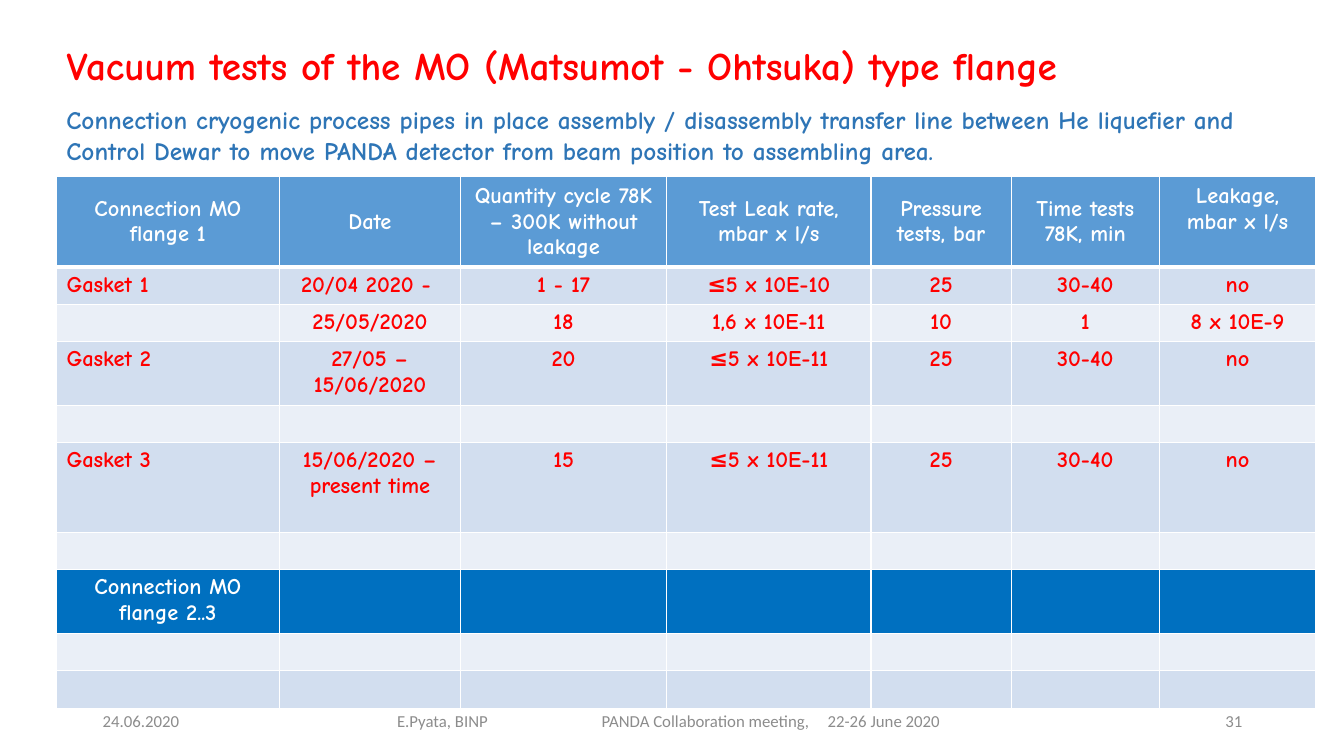
"""Build the slide on vacuum tests of the MO type flange."""
from lxml import etree
from pptx import Presentation
from pptx.dml.color import RGBColor
from pptx.enum import text as t
from pptx.oxml import ns
from pptx.util import Inches, Pt

TITLE = "Vacuum tests of the MO (Matsumot - Ohtsuka) type flange"
SUBTITLE = ("Connection cryogenic process pipes in place assembly / disassembly "
            "transfer line between He liquefier and Control Dewar to move PANDA "
            "detector from beam position to assembling area.")
HEADERS = ["Connection MO flange 1", "Date", "Quantity cycle 78K – 300K without leakage",
           "Test Leak rate, mbar x l/s", "Pressure tests, bar", "Time tests 78K, min",
           "Leakage, mbar x l/s"]
EMPTY = [""] * len(HEADERS)
ROWS = [
    HEADERS,
    ["Gasket 1", "20/04 2020 - ", "1 - 17", "≤5 x 10E-10", "25", "30-40", "no"],
    ["", "25/05/2020", "18", "1,6 x 10E-11", "10", "1", "8 x 10E-9"],
    ["Gasket 2", "27/05 – 15/06/2020", "20", "≤5 x 10E-11", "25", "30-40", "no"],
    EMPTY,
    ["Gasket 3", "15/06/2020 – present time", "15", "≤5 x 10E-11", "25", "30-40", "no"],
    EMPTY,
    ["Connection MO flange 2..3"] + EMPTY[1:],
    EMPTY,
    EMPTY,
]
COLUMN_WIDTHS = [2.21, 1.8, 2.04, 2.03, 1.39, 1.47, 1.55]
ROW_HEIGHTS = [0.89, 0.37, 0.37, 0.63, 0.37, 0.89, 0.37, 0.63, 0.37, 0.37]
SECTION_FILLS = {0: "5B9BD5", 7: "0070C0"}
BAND_FILLS = ["EAEFF7", "D2DEEF"]
DATE, PAGE = "24.06.2020", "31"
FOOTER = ["E.Pyata, BINP", "PANDA Collaboration meeting,", "22-26 June 2020"]
FOOTER_TABS = [2.03, 4.27]
RED, BLUE, WHITE, GREY = "FF0000", "2E75B6", "FFFFFF", "8C8C8C"
HAND, PLAIN = "Comic Neue", "Calibri"
LEFT, CENTER, RIGHT = t.PP_ALIGN.LEFT, t.PP_ALIGN.CENTER, t.PP_ALIGN.RIGHT
TOP, MIDDLE = t.MSO_ANCHOR.TOP, t.MSO_ANCHOR.MIDDLE


def color(value):
    return RGBColor.from_string(value)


def write(frame, content, size, font_name, font_color, align=LEFT, bold=False):
    paragraph = frame.paragraphs[0]
    paragraph.alignment = align
    run = paragraph.add_run()
    run.text = content
    run.font.size, run.font.name, run.font.bold = Pt(size), font_name, bold
    run.font.color.rgb = color(font_color)


def place_box(slide, left, top, width, height, anchor):
    frame = slide.shapes.add_textbox(*map(Inches, (left, top, width, height))).text_frame
    frame.word_wrap = True
    frame.vertical_anchor = anchor
    return frame


def add_tabs(frame, positions):
    properties = frame.paragraphs[0]._p.get_or_add_pPr()
    tab_list = etree.SubElement(properties, ns.qn("a:tabLst"))
    for position in positions:
        etree.SubElement(tab_list, ns.qn("a:tab"), pos=str(Inches(position)), algn="l")


def add_borders(cell, top_width, bottom_width):
    properties = cell._tc.get_or_add_tcPr()
    sides = [("a:lnL", 1), ("a:lnR", 1), ("a:lnT", top_width), ("a:lnB", bottom_width)]
    for index, (side, width) in enumerate(sides):
        line = etree.Element(ns.qn(side), w=str(Pt(width)))
        fill = etree.SubElement(line, ns.qn("a:solidFill"))
        etree.SubElement(fill, ns.qn("a:srgbClr"), val=WHITE)
        properties.insert(index, line)


def fill_cell(cell, row, column, content):
    section = row in SECTION_FILLS
    cell.fill.solid()
    cell.fill.fore_color.rgb = color(SECTION_FILLS.get(row, BAND_FILLS[row % 2]))
    add_borders(cell, 3 if row == 1 else 1, 3 if row == 0 else 1)
    cell.vertical_anchor = MIDDLE if row == 0 else TOP
    if not content:
        cell.margin_top = cell.margin_bottom = 0
        return
    align = LEFT if column == 0 and not section else CENTER
    write(cell.text_frame, content, 16, HAND, WHITE if section else RED, align, True)


def add_results(slide):
    frame = slide.shapes.add_table(
        len(ROWS), len(HEADERS), Inches(0.56), Inches(1.75),
        Inches(sum(COLUMN_WIDTHS)), Inches(sum(ROW_HEIGHTS)))
    table = frame.table
    for column, width in zip(table.columns, COLUMN_WIDTHS):
        column.width = Inches(width)
    for row, height in zip(table.rows, ROW_HEIGHTS):
        row.height = Inches(height)
    for row, contents in enumerate(ROWS):
        for column, content in enumerate(contents):
            fill_cell(table.cell(row, column), row, column, content)
    table.cell(0, len(HEADERS) - 1).margin_bottom = Inches(0.3)


def main():
    presentation = Presentation()
    presentation.slide_width, presentation.slide_height = Inches(13.33), Inches(7.5)
    slide = presentation.slides.add_slide(presentation.slide_layouts[5])

    title = slide.shapes.title
    title.left, title.top, title.width, title.height = map(Inches, (0.56, 0.36, 12.63, 0.57))
    title.text_frame.vertical_anchor = TOP
    title.text_frame.auto_size = t.MSO_AUTO_SIZE.NONE
    write(title.text_frame, TITLE, 28, HAND, RED, bold=True)

    subtitle = place_box(slide, 0.56, 0.99, 12.15, 0.71, TOP)
    write(subtitle, SUBTITLE, 18, HAND, BLUE, bold=True)
    add_results(slide)

    date = place_box(slide, 0.92, 6.95, 3, 0.4, MIDDLE)
    write(date, DATE, 12, PLAIN, GREY)
    footer = place_box(slide, 3.84, 6.95, 6.9, 0.4, MIDDLE)
    add_tabs(footer, FOOTER_TABS)
    write(footer, "\t".join(FOOTER), 12, PLAIN, GREY)
    page = place_box(slide, 9.42, 6.95, 3, 0.4, MIDDLE)
    write(page, PAGE, 12, PLAIN, GREY, RIGHT)

    presentation.save("out.pptx")


if __name__ == "__main__":
    main()
